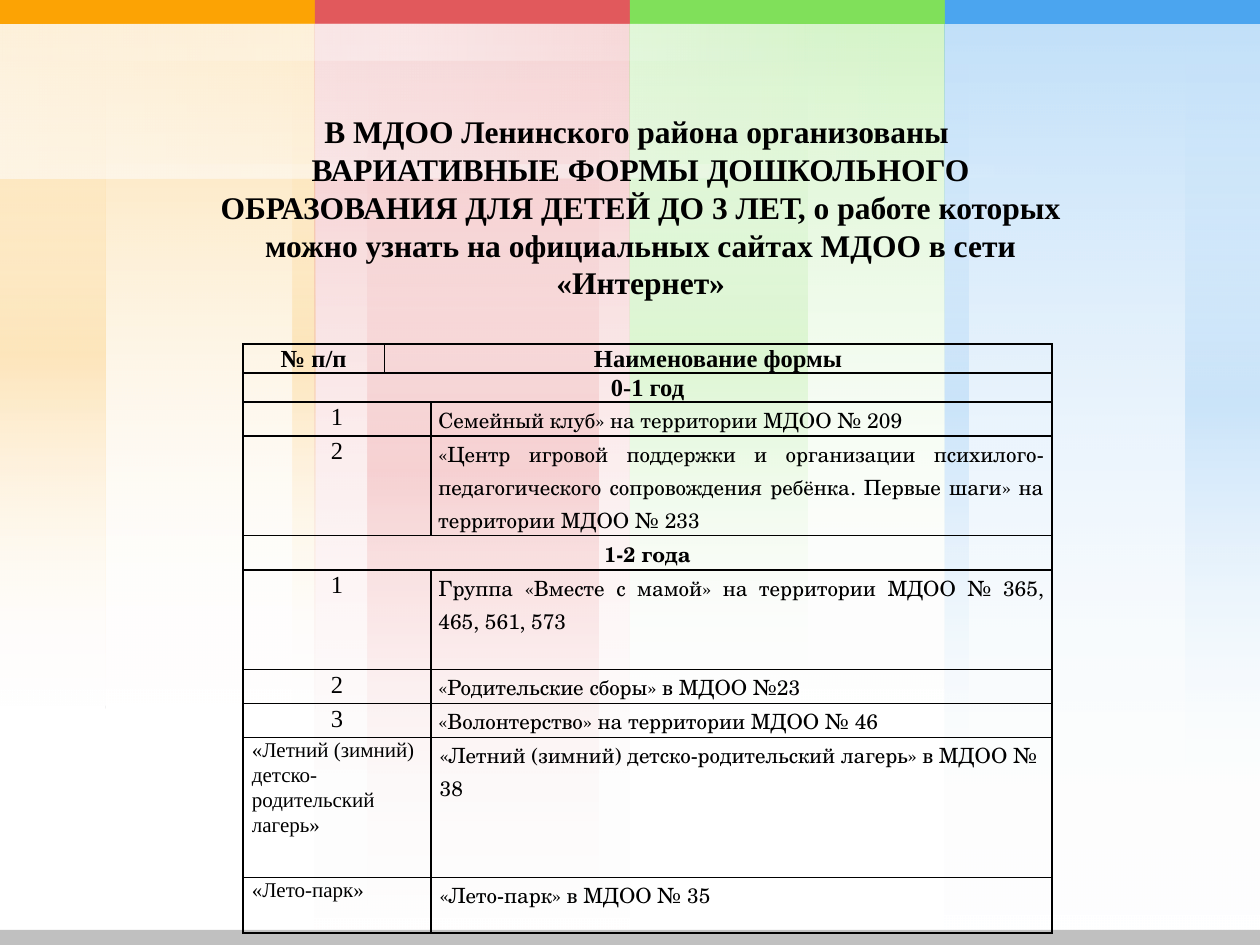
import lxml.etree
import pptx
import pptx.dml.color
import pptx.enum.shapes
import pptx.enum.text
import pptx.oxml
import pptx.oxml.ns
import pptx.util

COLUMNS, ROWS = 100, 75
BAND = COLUMNS / 4
SERIF, SCHOOL = "Times New Roman", "TeX Gyre Schola"
ALIGN = pptx.enum.text.PP_ALIGN
WHITE = "FFFFFF"

BANDS = [
    ("FCA304", 56.2, [(23.2, 1.8), (0, 8.4)], 56.2),
    ("E1595C", 75, [(4.2, 18.3)], 75),
    ("80E05A", 56.2, [(0, 14.1)], 56.2),
    ("4BA5EF", 74.7, [(0, 1.9), (19.1, 5.9)], 63.7),
]
TITLE = ("В МДОО Ленинского района организованы \n"
         "ВАРИАТИВНЫЕ ФОРМЫ ДОШКОЛЬНОГО ОБРАЗОВАНИЯ ДЛЯ ДЕТЕЙ ДО 3 ЛЕТ, "
         "о работе которых можно узнать на официальных сайтах МДОО в сети «Интернет»")
FORMS = [
    (2.3, "№ п/п", "Наименование формы"),
    (2.3, "0-1 год", None),
    (2.7, "1", "Семейный клуб» на территории МДОО № 209"),
    (7.9, "2", "«Центр игровой поддержки и организации психилого-педагогического "
               "сопровождения ребёнка. Первые шаги» на территории МДОО № 233"),
    (2.7, "1-2 года", None),
    (7.9, "1", "Группа «Вместе с мамой» на территории МДОО № 365, 465, 561, 573"),
    (2.7, "2", "«Родительские сборы» в МДОО №23"),
    (2.7, "3", "«Волонтерство» на территории МДОО № 46"),
    (11.1, "«Летний (зимний) детско-родительский лагерь»",
     "«Летний (зимний) детско-родительский лагерь» в МДОО № 38"),
    (4.4, "«Лето-парк»", "«Лето-парк» в МДОО № 35"),
]


def grid(n):
    """Turn a number of grid units into a length."""
    return pptx.util.Inches(n / 10)


def rgb(color):
    """Turn a hex string into a colour."""
    return pptx.dml.color.RGBColor.from_string(color)


def add_rect(s, x, y, w, h, color=WHITE, rotation=0):
    """Add a plain rectangle measured in grid units."""
    sp = s.shapes.add_shape(pptx.enum.shapes.MSO_SHAPE.RECTANGLE, *map(grid, (x, y, w, h)))
    sp.shadow.inherit = False
    sp.rotation = rotation
    sp.fill.solid()
    sp.fill.fore_color.rgb = rgb(color)
    sp.line.fill.background()
    return sp


def fade(sp, *stops):
    """Fill a shape with evenly spaced stops of colour and opacity."""
    ns = pptx.oxml.ns.nsdecls("a")
    gs = "".join(
        f'<a:gs pos="{100000 * i // (len(stops) - 1)}"><a:srgbClr val="{color}">'
        f'<a:alpha val="{alpha * 1000}"/></a:srgbClr></a:gs>'
        for i, (color, alpha) in enumerate(stops))
    grad = pptx.oxml.parse_xml(
        f'<a:gradFill {ns} rotWithShape="1"><a:gsLst>{gs}</a:gsLst>'
        '<a:lin ang="5400000" scaled="0"/></a:gradFill>')
    solid = sp.element.spPr.find(pptx.oxml.ns.qn("a:solidFill"))
    solid.getparent().replace(solid, grad)


def add_band(s, left, color, height, stripes, stripe_height):
    """Add one coloured column with its inner stripes."""
    clear = (WHITE, 0)
    fade(add_rect(s, left, 0, BAND, height), (color, 20), clear)
    for x, w in stripes:
        fade(add_rect(s, left + x, 0, w, stripe_height), clear, (color, 20), clear)
    fade(add_rect(s, left, 0, BAND, height), (color, 20), clear)


def add_background(s):
    """Add the columns, the top strip, the white glow and the bottom strip."""
    for i, band in enumerate(BANDS):
        add_band(s, i * BAND, *band)
    for i, band in enumerate(BANDS):
        add_rect(s, i * BAND, 0, BAND, 1.9, band[0])
    clear, veil = (WHITE, 0), (WHITE, 35)
    panel = (31.5, -29.5, 12.2, 75.1)
    for box, stops in [((41.6, -28.5, 1, 84.2), (clear, veil, clear)),
                       (panel, (veil, clear)),
                       ((30.6, -28.7, 2.9, 64.1), (clear, veil, clear)),
                       (panel, (veil, clear))]:
        fade(add_rect(s, *box, rotation=270), *stops)
    add_rect(s, 0, ROWS - 1.2, COLUMNS, 1.2, "C0C0C0")


def style(p, align, font, size, bold):
    """Format a paragraph and its runs."""
    p.alignment = align
    for r in p.runs:
        r.font.name, r.font.size, r.font.bold = font, pptx.util.Pt(size), bold
        r.font.color.rgb = rgb("000000")


def place_title(s):
    """Fill the title placeholder and bring it in front of the background."""
    sp = s.shapes.title
    sp.left, sp.top, sp.width, sp.height = map(grid, (15.4, 8.4, 70.9, 16.2))
    tf = sp.text_frame
    tf.text = TITLE
    tf.word_wrap = True
    tf.auto_size = pptx.enum.text.MSO_AUTO_SIZE.NONE
    tf.vertical_anchor = pptx.enum.text.MSO_ANCHOR.TOP
    for p in tf.paragraphs:
        style(p, ALIGN.CENTER, SERIF, 18, True)
    s.shapes.element.append(sp.element)


def write_cell(cell, text, inset, *look):
    """Write and format one table cell."""
    cell.text = text
    cell.margin_left = cell.margin_right = grid(inset)
    cell.margin_top = cell.margin_bottom = 0
    p = cell.text_frame.paragraphs[0]
    p.line_spacing = 1.07
    style(p, *look)


def add_borders(frame):
    """Draw a thin black line around every cell."""
    ns = pptx.oxml.ns.nsdecls("a")
    for tc_pr in frame.element.iter(pptx.oxml.ns.qn("a:tcPr")):
        for i, side in enumerate("LRTB"):
            tc_pr.insert(i, pptx.oxml.parse_xml(
                f'<a:ln{side} {ns} w="12700"><a:solidFill><a:srgbClr val="000000"/>'
                f'</a:solidFill></a:ln{side}>'))


def add_forms_table(s):
    """Add the table of preschool forms."""
    widths = (11.2, 3.7, 49.3)
    heights = [row[0] for row in FORMS]
    frame = s.shapes.add_table(len(FORMS), len(widths), *map(
        grid, (19.3, 27.3, sum(widths), sum(heights))))
    table = frame.table
    table.first_row = table.horz_banding = False
    for column, width in zip(table.columns, widths):
        column.width = grid(width)
    for cell in table.iter_cells():
        cell.fill.background()
    for i, (height, label, name) in enumerate(FORMS):
        table.rows[i].height = grid(height)
        first, middle, last = (table.cell(i, j) for j in range(3))
        if name is None:
            first.merge(last)
            size, font = (14, SERIF) if i == 1 else (12, SCHOOL)
            write_cell(first, label, 0.6, ALIGN.CENTER, font, size, True)
        elif i == 0:
            middle.merge(last)
            for cell, text in ((first, label), (middle, name)):
                write_cell(cell, text, 0.6, ALIGN.CENTER, SERIF, 14, True)
        else:
            first.merge(middle)
            numbered = label.isdigit()
            inset = 0.6 if numbered else 0.7
            write_cell(first, label, inset, ALIGN.CENTER if numbered else ALIGN.LEFT,
                       SERIF, 14 if numbered else 12, False)
            write_cell(last, name, inset, ALIGN.JUSTIFY if numbered else ALIGN.LEFT,
                       SCHOOL, 12, False)
    add_borders(frame)


def main():
    """Build the slide and save it."""
    prs = pptx.Presentation()
    prs.slide_width, prs.slide_height = grid(COLUMNS), grid(ROWS)
    s = prs.slides.add_slide(prs.slide_layouts[5])
    add_background(s)
    add_forms_table(s)
    place_title(s)
    prs.save("out.pptx")


if __name__ == "__main__":
    main()
